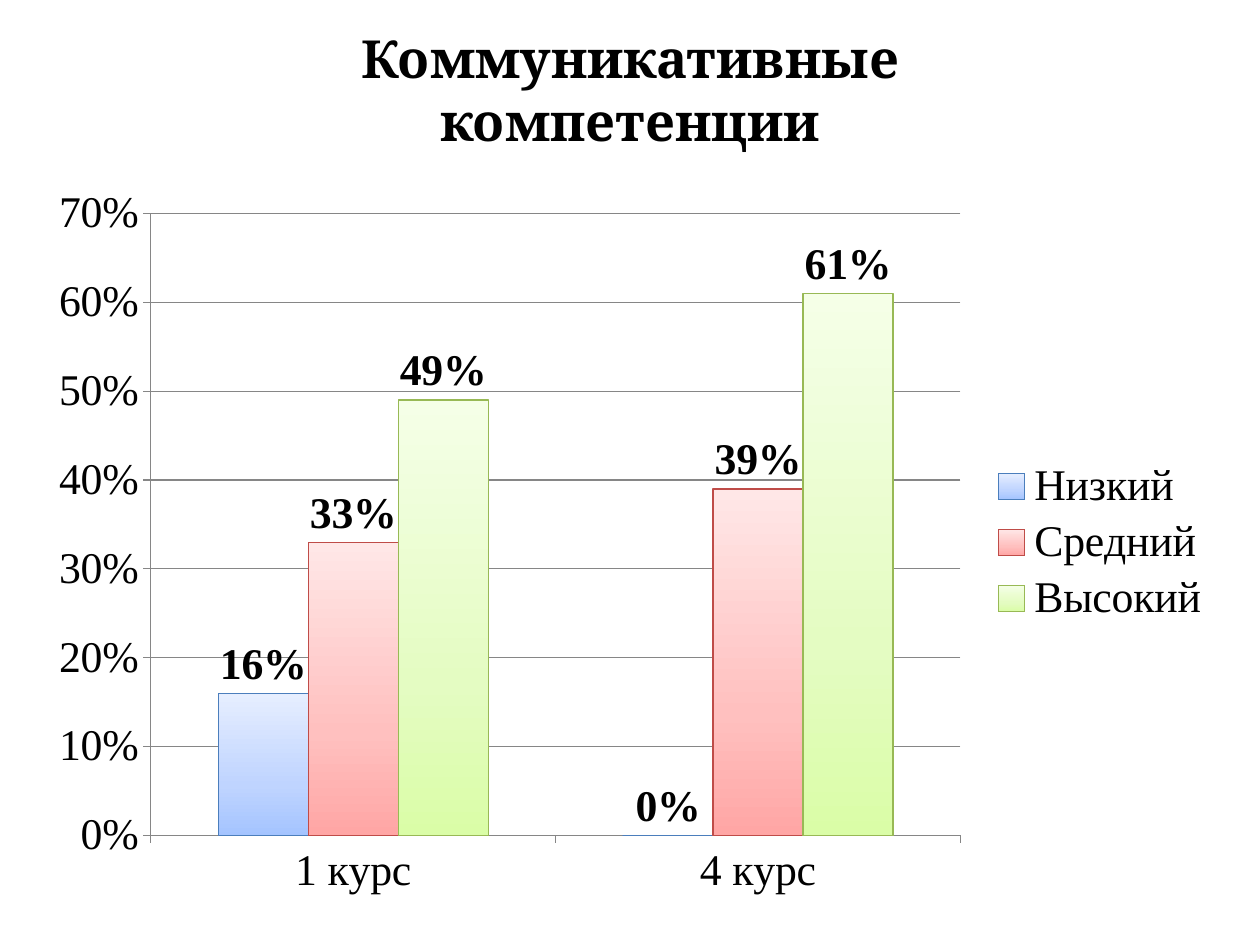
from lxml import etree
from pptx import Presentation
from pptx.chart.data import CategoryChartData
from pptx.dml.color import RGBColor
from pptx.enum import chart as ch, shapes, text
from pptx.oxml import parse_xml
from pptx.oxml.ns import qn
from pptx.util import Cm, Pt

NS = "http://schemas.openxmlformats.org/drawingml/2006/main"
CNS = "http://schemas.openxmlformats.org/drawingml/2006/chart"
HUES = {"ink": "000000", "back": "FFFFFF", "axis": "868686"}
LEVELS = [
    ("Низкий", (0.16, 0), ("A4C4FF", "BFD4FF", "E6EEFF"), "4B7EBC"),
    ("Средний", (0.33, 0.39), ("FFA6A5", "FFC0BF", "FFE7E7"), "BF4C48"),
    ("Высокий", (0.49, 0.61), ("DAFDA7", "E4FCC2", "F5FFE7"), "98B955"),
]
LEFT, WIDTH = Cm(0.71), Cm(24)


def rgb(code):
    return RGBColor.from_string(code)


deck = Presentation()
deck.slide_width, deck.slide_height = Cm(25.4), Cm(19.05)
slide = deck.slides.add_slide(deck.slide_layouts[6])

# Chart data
data = CategoryChartData(number_format="0%")
data.categories = ["1 курс", "4 курс"]
for name, vals, tints, edge in LEVELS:
    data.add_series(name, vals)
chart = slide.shapes.add_chart(
    ch.XL_CHART_TYPE.COLUMN_CLUSTERED, LEFT, Cm(3.53), WIDTH, Cm(14.81), data
).chart
chart.has_title = False
chart.font.name, chart.font.size = "Times New Roman", Pt(25)
chart.font.color.rgb = rgb(HUES["ink"])

# Half clear chart ground
ground = parse_xml(
    f'<c:spPr xmlns:c="{CNS}" xmlns:a="{NS}"><a:solidFill>'
    f'<a:srgbClr val="{HUES["back"]}"><a:alpha val="50000"/></a:srgbClr>'
    "</a:solidFill><a:ln><a:noFill/></a:ln></c:spPr>"
)
chart.font._element.getroottree().getroot().find(qn("c:txPr")).addprevious(ground)

# Axes and legend
rise = chart.value_axis
rise.minimum_scale, rise.maximum_scale, rise.major_unit = 0, 0.7, 0.1
rise.has_major_gridlines = True
rise.tick_labels.number_format = "0%"
rise.tick_labels.number_format_is_linked = False
for axis in (rise, chart.category_axis):
    axis.major_tick_mark = ch.XL_TICK_MARK.OUTSIDE
    axis.minor_tick_mark = ch.XL_TICK_MARK.NONE
for part in (rise, chart.category_axis, rise.major_gridlines):
    part.format.line.color.rgb = rgb(HUES["axis"])
    part.format.line.width = Pt(0.75)
chart.has_legend = True
chart.legend.position = ch.XL_LEGEND_POSITION.RIGHT
chart.legend.include_in_layout = False

# Columns with upward gradients and bold values
plot = chart.plots[0]
plot.gap_width, plot.overlap, plot.vary_by_categories = 150, 0, False
for bar, (name, vals, tints, edge) in zip(plot.series, LEVELS):
    bar.invert_if_negative = False
    bar.format.line.color.rgb = rgb(edge)
    bar.format.line.width = Pt(0.75)
    stops = "".join(
        f'<a:gs pos="{place * 1000}"><a:srgbClr val="{tint}"/></a:gs>'
        for place, tint in zip((0, 35, 100), tints)
    )
    bar._element.find(qn("c:spPr")).insert(0, parse_xml(
        f'<a:gradFill xmlns:a="{NS}" rotWithShape="1"><a:gsLst>{stops}</a:gsLst>'
        '<a:lin ang="16200000" scaled="1"/></a:gradFill>'
    ))
    tags = bar.data_labels
    tags.show_value = True
    tags.number_format, tags.number_format_is_linked = "0%", False
    tags.position = ch.XL_LABEL_POSITION.OUTSIDE_END
    tags.font.bold = True
    tags.font.name, tags.font.size = "Times New Roman", Pt(25)
    tags.font.color.rgb = rgb(HUES["ink"])

# Title
head = slide.shapes.add_shape(
    shapes.MSO_SHAPE.RECTANGLE, LEFT, Cm(0.38), WIDTH, Cm(2.82)
)
head.shadow.inherit = False
head.fill.solid()
head.fill.fore_color.rgb = rgb(HUES["back"])
tone = head._element.spPr.find(qn("a:solidFill"))[0]
etree.SubElement(tone, qn("a:alpha")).set("val", "70000")
head.line.fill.background()
frame = head.text_frame
frame.word_wrap = True
frame.auto_size = text.MSO_AUTO_SIZE.SHAPE_TO_FIT_TEXT
frame.text = "Коммуникативные\nкомпетенции"
for para in frame.paragraphs:
    para.alignment = text.PP_ALIGN.CENTER
    for run in para.runs:
        run.font.name, run.font.size, run.font.bold = "Cambria", Pt(30), True
        run.font.color.rgb = rgb(HUES["ink"])

deck.save("out.pptx")
